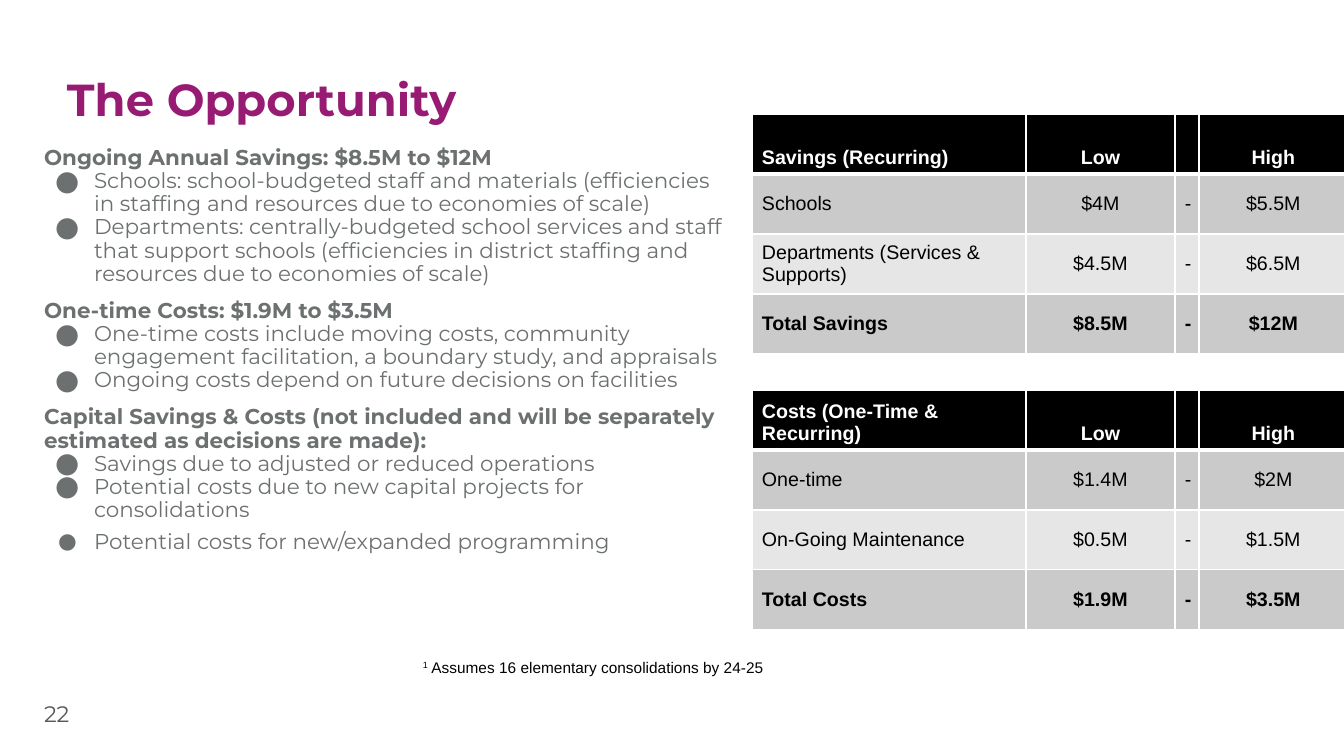
from lxml.etree import SubElement
from pptx import Presentation
from pptx.dml.color import RGBColor
from pptx.enum.text import MSO_ANCHOR, PP_ALIGN
from pptx.oxml.ns import qn
from pptx.util import Emu, Pt

PURPLE = RGBColor(0x97, 0x1B, 0x72)
GRAY = RGBColor(0x6C, 0x70, 0x70)
DARK_GRAY = RGBColor(0x59, 0x59, 0x59)
BLACK = RGBColor(0, 0, 0)
WHITE = RGBColor(0xFF, 0xFF, 0xFF)
BAND_DARK = RGBColor(0xCA, 0xCA, 0xCA)
BAND_LIGHT = RGBColor(0xE6, 0xE6, 0xE6)

TITLE = "The Opportunity"
PAGE_NUMBER = "22"
FOOTNOTE_MARK, FOOTNOTE = "1", " Assumes 16 elementary consolidations by 24-25"

SECTIONS = [
    ("Ongoing Annual Savings: $8.5M to $12M", [
        "Schools: school-budgeted staff and materials (efficiencies in staffing "
        "and resources due to economies of scale)",
        "Departments: centrally-budgeted school services and staff that support schools "
        "(efficiencies in district staffing and resources due to economies of scale)",
    ]),
    ("One-time Costs: $1.9M to $3.5M", [
        "One-time costs include moving costs, community engagement facilitation, "
        "a boundary study, and appraisals",
        "Ongoing costs depend on future decisions on facilities",
    ]),
    ("Capital Savings & Costs (not included and will be separately estimated "
     "as decisions are made):", [
        "Savings due to adjusted or reduced operations",
        "Potential costs due to new capital projects for consolidations",
    ]),
]
LAST_POINT = "Potential costs for new/expanded programming"

SAVINGS = [
    ("Savings (Recurring)", "Low", "", "High"),
    ("Schools", "$4M", "-", "$5.5M"),
    ("Departments (Services & Supports)", "$4.5M", "-", "$6.5M"),
    ("Total Savings", "$8.5M", "-", "$12M"),
]
COSTS = [
    ("Costs (One-Time & Recurring)", "Low", "", "High"),
    ("One-time", "$1.4M", "-", "$2M"),
    ("On-Going Maintenance", "$0.5M", "-", "$1.5M"),
    ("Total Costs", "$1.9M", "-", "$3.5M"),
]
TABLE_LEFT = 752
TABLE_TOPS = [(SAVINGS, 114), (COSTS, 390)]
COLUMN_WIDTHS = [274, 149, 24, 149]
ROW_HEIGHT = 60


def px(length):
    return Emu(round(length * 914400 / 100.8))


def add_box(slide, left, top, width, height, inset=10, anchor=MSO_ANCHOR.TOP):
    frame = slide.shapes.add_textbox(px(left), px(top), px(width), px(height)).text_frame
    frame.word_wrap = True
    frame.vertical_anchor = anchor
    frame.margin_left = frame.margin_right = px(10)
    frame.margin_top = frame.margin_bottom = px(inset)
    return frame


def write(paragraph, text, size, color, font="Montserrat", bold=False,
          align=PP_ALIGN.LEFT, baseline=None):
    paragraph.alignment = align
    run = paragraph.add_run()
    run.text = text
    run.font.size = Pt(size)
    run.font.name = font
    run.font.bold = bold
    run.font.color.rgb = color
    if baseline:
        run.font._element.set("baseline", str(baseline * 1000))


def add_bullet(paragraph, hanging, percent):
    properties = paragraph._p.get_or_add_pPr()
    properties.set("marL", str(px(50)))
    properties.set("indent", str(-px(hanging)))
    bullet_color = SubElement(properties, qn("a:buClr"))
    SubElement(bullet_color, qn("a:srgbClr"), val=str(GRAY))
    SubElement(properties, qn("a:buSzPct"), val=str(percent * 1000))
    SubElement(properties, qn("a:buFont"), typeface="Montserrat")
    SubElement(properties, qn("a:buChar"), char="●")


def add_point(frame, text, hanging=39, percent=129, space=0):
    point = frame.add_paragraph()
    point.line_spacing = 0.9
    point.space_before = point.space_after = Pt(space)
    add_bullet(point, hanging, percent)
    write(point, text, 15.3, GRAY)


def add_sections(frame):
    for index, (heading, points) in enumerate(SECTIONS):
        paragraph = frame.add_paragraph() if index else frame.paragraphs[0]
        paragraph.line_spacing = 0.9
        if index:
            paragraph.space_before = Pt(10)
        write(paragraph, heading, 15.3, GRAY, bold=True)
        for point in points:
            add_point(frame, point)
    add_point(frame, LAST_POINT, hanging=36, percent=100, space=6)


def set_borders(cell, bottom):
    properties = cell._tc.get_or_add_tcPr()
    widths = {"a:lnL": 1, "a:lnR": 1, "a:lnT": 1, "a:lnB": bottom}
    for position, (side, width) in enumerate(widths.items()):
        line = SubElement(properties, qn(side), w=str(Pt(width)))
        SubElement(SubElement(line, qn("a:solidFill")), qn("a:srgbClr"), val=str(WHITE))
        properties.insert(position, line)


def add_amounts(slide, rows, top):
    table = slide.shapes.add_table(
        len(rows), len(COLUMN_WIDTHS), px(TABLE_LEFT), px(top),
        px(sum(COLUMN_WIDTHS)), px(ROW_HEIGHT * len(rows))).table
    for column, width in zip(table.columns, COLUMN_WIDTHS):
        column.width = px(width)
    for r, values in enumerate(rows):
        table.rows[r].height = px(ROW_HEIGHT)
        header, total = r == 0, r == len(rows) - 1
        for c, value in enumerate(values):
            cell = table.cell(r, c)
            cell.margin_left = cell.margin_right = px(10)
            cell.margin_top = cell.margin_bottom = px(5)
            cell.vertical_anchor = MSO_ANCHOR.BOTTOM if header else MSO_ANCHOR.MIDDLE
            cell.fill.solid()
            cell.fill.fore_color.rgb = BLACK if header else BAND_DARK if r % 2 else BAND_LIGHT
            set_borders(cell, bottom=3 if header else 1)
            if value:
                write(cell.text_frame.paragraphs[0], value, 14, WHITE if header else BLACK,
                      font="Arial", bold=header or total,
                      align=PP_ALIGN.CENTER if c else PP_ALIGN.LEFT)


def main():
    deck = Presentation()
    deck.slide_width, deck.slide_height = px(1344), px(756)
    slide = deck.slides.add_slide(deck.slide_layouts[6])

    title = add_box(slide, 57, 62, 1081, 124)
    write(title.paragraphs[0], TITLE, 32, PURPLE, bold=True)
    page = add_box(slide, 34, 685, 81, 57, anchor=MSO_ANCHOR.MIDDLE)
    write(page.paragraphs[0], PAGE_NUMBER, 16, DARK_GRAY)
    add_sections(add_box(slide, 34, 137, 707, 503))

    for rows, top in TABLE_TOPS:
        add_amounts(slide, rows, top)

    footnote = add_box(slide, 413, 653, 486, 29, inset=5).paragraphs[0]
    write(footnote, FOOTNOTE_MARK, 11, BLACK, font="Arial", baseline=30)
    write(footnote, FOOTNOTE, 11, BLACK, font="Arial")
    deck.save("out.pptx")


if __name__ == "__main__":
    main()
